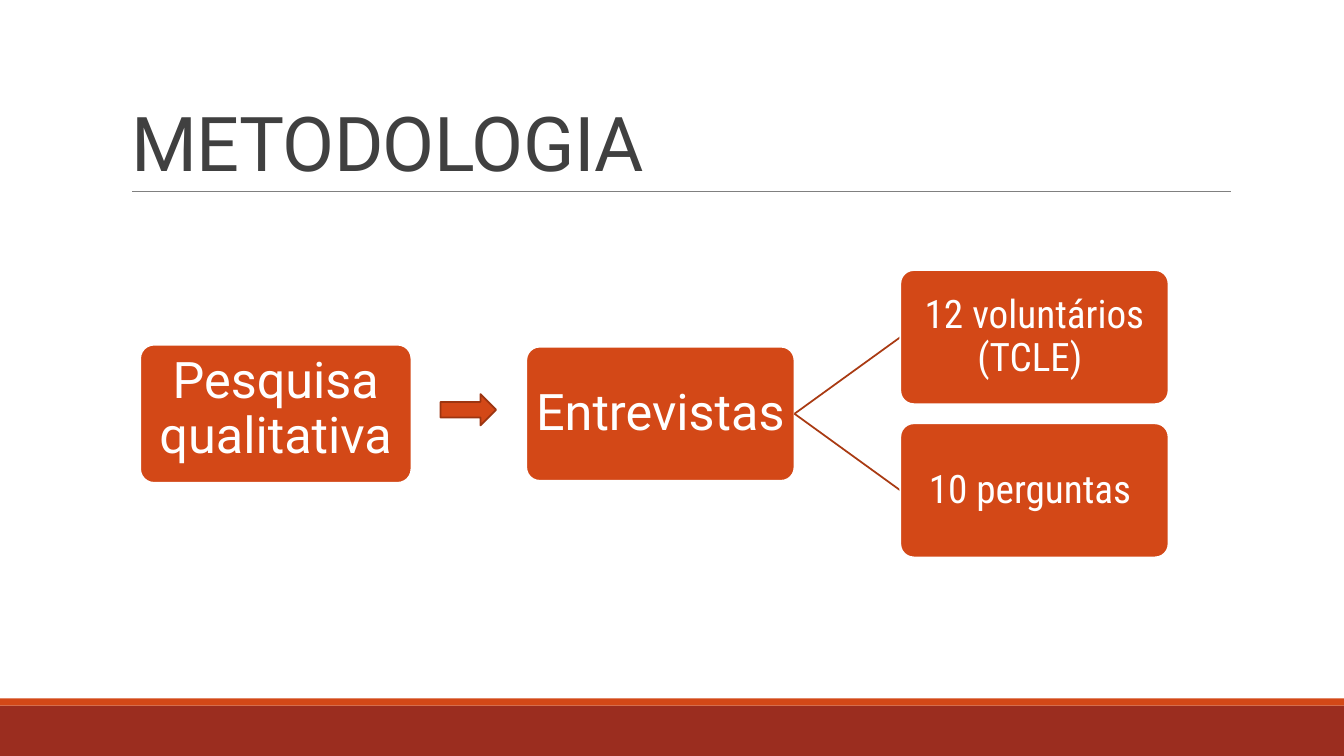
"""Builds the METODOLOGIA slide: a research flow from method to interviews."""
from lxml import etree
from pptx import Presentation
from pptx.dml.color import RGBColor
from pptx.enum.shapes import MSO_CONNECTOR, MSO_SHAPE
from pptx.enum.text import MSO_ANCHOR, MSO_AUTO_SIZE, PP_ALIGN
from pptx.oxml.ns import qn
from pptx.util import Inches, Pt

ORANGE = RGBColor(0xD3, 0x48, 0x17)
BRICK = RGBColor(0x9B, 0x2D, 0x1F)
BRANCH = RGBColor(0xA9, 0x3A, 0x12)
ARROW_EDGE = RGBColor(0x9C, 0x35, 0x11)
GRAY = RGBColor(0x80, 0x80, 0x80)
DARK = RGBColor(0x40, 0x40, 0x40)
WHITE = RGBColor(0xFF, 0xFF, 0xFF)

BOX_W, BOX_H = 2.66, 1.33
INTERVIEW_X, INTERVIEW_Y = 5.22, 3.44
DETAIL_X = 8.93
DETAILS = [("12 voluntários (TCLE) ", 2.68), ("10 perguntas ", 4.2)]


def set_text(sp, text, font="Roboto", size=36, color=WHITE, align=PP_ALIGN.CENTER,
             anchor=MSO_ANCHOR.MIDDLE, leading=0.9, inset=0.03, bottom=None, spacing=None):
    tf = sp.text_frame
    tf.word_wrap = True
    tf.auto_size = MSO_AUTO_SIZE.NONE
    tf.vertical_anchor = anchor
    tf.margin_left = tf.margin_right = Inches(inset)
    tf.margin_top = Inches(inset)
    tf.margin_bottom = Inches(inset if bottom is None else bottom)
    p = tf.paragraphs[0]
    p.alignment = align
    p.line_spacing = leading
    r = p.add_run()
    r.text = text
    r.font.name = font
    r.font.size = Pt(size)
    r.font.color.rgb = color
    if spacing is not None:
        r._r.get_or_add_rPr().set("spc", str(int(spacing * 100)))


def add_block(s, kind, x, y, w, h, fill=ORANGE, line=None):
    sp = s.shapes.add_shape(kind, Inches(x), Inches(y), Inches(w), Inches(h))
    sp.shadow.inherit = False
    sp.fill.solid()
    sp.fill.fore_color.rgb = fill
    if line is None:
        sp.line.fill.background()
    else:
        sp.line.color.rgb = line
        sp.line.width = Pt(1.25)
    return sp


def add_box(s, text, x, y, w=BOX_W, h=BOX_H, **fmt):
    sp = add_block(s, MSO_SHAPE.ROUNDED_RECTANGLE, x, y, w, h, line=WHITE)
    sp.adjustments[0] = 0.1
    set_text(sp, text, **fmt)


def add_line(s, x1, y1, x2, y2, color, width):
    c = s.shapes.add_connector(MSO_CONNECTOR.STRAIGHT, Inches(x1), Inches(y1),
                               Inches(x2), Inches(y2))
    c.line.color.rgb = color
    c.line.width = Pt(width)
    etree.SubElement(c._element.spPr, qn("a:effectLst"))


def add_title(s, text):
    title = s.shapes.title
    title.left, title.top = Inches(1.2), Inches(0.31)
    title.width, title.height = Inches(11), Inches(1.59)
    set_text(title, text, size=54, color=DARK, align=PP_ALIGN.LEFT,
             anchor=MSO_ANCHOR.BOTTOM, leading=0.85, inset=0.1, bottom=0.05, spacing=-0.5)


def main():
    prs = Presentation()
    prs.slide_width, prs.slide_height = Inches(13.33), Inches(7.5)
    s = prs.slides.add_slide(prs.slide_layouts[5])

    add_block(s, MSO_SHAPE.RECTANGLE, 0, 7, 13.33, 0.5, fill=BRICK)
    add_block(s, MSO_SHAPE.RECTANGLE, 0, 6.93, 13.33, 0.07)
    add_line(s, 1.31, 1.9, 12.21, 1.9, GRAY, 0.5)
    add_title(s, "METODOLOGIA")

    add_box(s, "Pesquisa qualitativa", 1.39, 3.42, 2.69, 1.37, bottom=0.11)
    add_block(s, MSO_SHAPE.RIGHT_ARROW, 4.37, 3.91, 0.55, 0.31, line=ARROW_EDGE)
    add_box(s, "Entrevistas", INTERVIEW_X, INTERVIEW_Y)
    for text, y in DETAILS:
        add_line(s, INTERVIEW_X + BOX_W, INTERVIEW_Y + BOX_H / 2,
                 DETAIL_X, y + BOX_H / 2, BRANCH, 1.25)
        add_box(s, text, DETAIL_X, y, font="Roboto Condensed", size=28, inset=0.02)

    prs.save("out.pptx")


if __name__ == "__main__":
    main()
